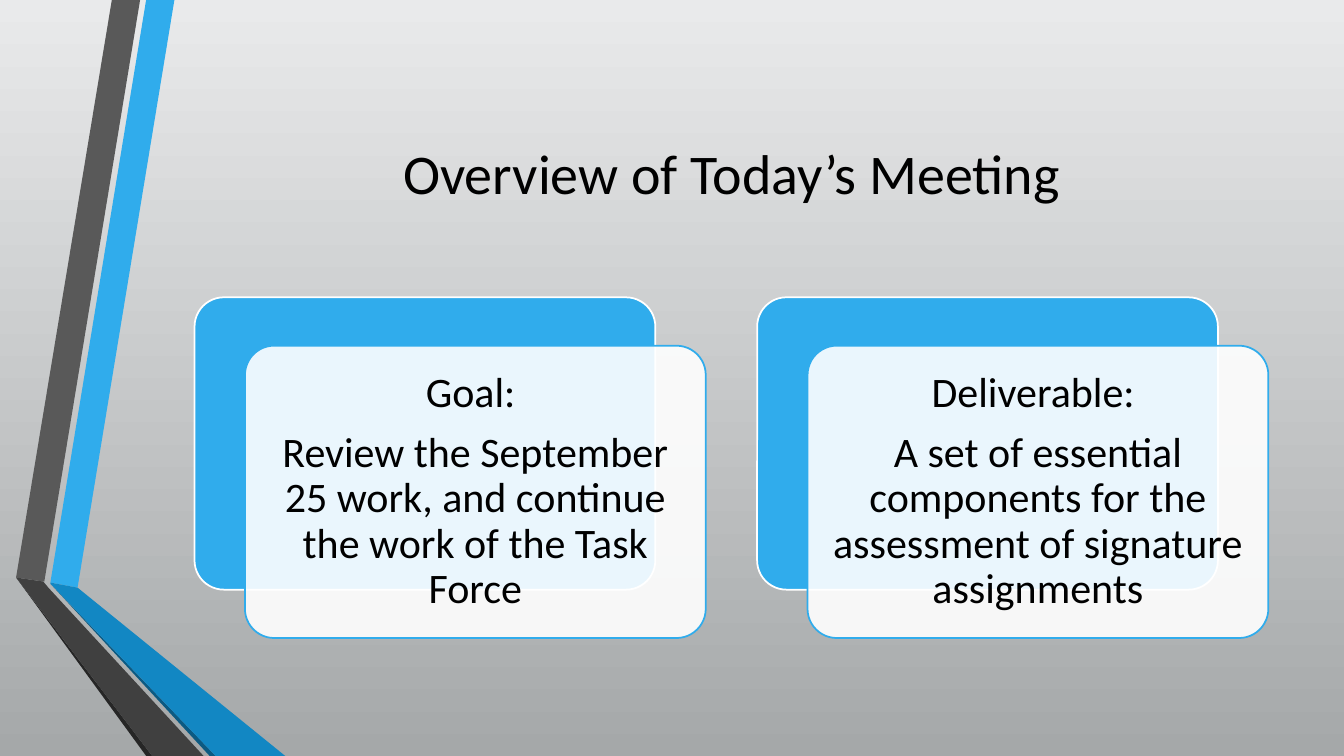
from dataclasses import dataclass

from lxml import etree
from pptx import Presentation
from pptx import util as u
from pptx.dml.color import RGBColor
from pptx.enum import shapes, text
from pptx.oxml.ns import qn

Inches, Pt = u.Inches, u.Pt


@dataclass(frozen=True)
class Theme:
    font: str = "Calibri"
    title_size: int = 40
    body_size: int = 30
    ink: str = "000000"
    accent: str = "30ACEC"
    accent_fold: str = "1287C3"
    accent_edge: str = "0C5A82"
    gray: str = "595959"
    gray_fold: str = "404040"
    gray_edge: str = "262626"
    panel: str = "FFFFFF"
    panel_opacity: int = 90
    backdrop_top: str = "E9EAEB"
    backdrop_bottom: str = "A5A8A9"


THEME = Theme()

# Folded ribbons on the left edge, back to front
RIBBONS = [
    (THEME.accent, [(0.5, 5.78), (0.77, 5.83), (1.73, 0), (1.45, 0)]),
    (THEME.gray, [(1.39, 0), (1.11, 0), (0.16, 5.73), (0.44, 5.77)]),
    (THEME.gray_edge, [(0.16, 5.73), (1.45, 7.5), (1.51, 7.5)]),
    (THEME.accent_edge, [(0.5, 5.79), (2.08, 7.5), (2.14, 7.5)]),
    (THEME.accent_fold,
     [(0.5, 5.79), (2.14, 7.5), (2.83, 7.5), (0.77, 5.83), (0.5, 5.78)]),
    (THEME.gray_fold,
     [(2.02, 7.5), (0.48, 5.83), (0.43, 5.77), (0.16, 5.73), (1.51, 7.5)]),
]

# Cards: a coloured back plate with a translucent panel in front
CARDS = [
    ("Goal: ",
     "Review the September 25 work, and continue the work of the Task Force"),
    ("Deliverable: ",
     "A set of essential components for the assessment of signature assignments"),
]
CARD_LEFT, CARD_TOP, CARD_STEP = 1.93, 2.95, 5.58
CARD_WIDTH, CARD_HEIGHT = 4.57, 2.9
PANEL_DX, PANEL_DY, TEXT_INSET = 0.5, 0.48, 0.09


def rgb(value):
    return RGBColor.from_string(value)


def paint_backdrop(slide):
    fill = slide.background.fill
    fill.gradient()
    fill.gradient_angle = 270
    colors = (THEME.backdrop_top, THEME.backdrop_bottom)
    for stop, position, color in zip(fill.gradient_stops, (0, 1), colors):
        stop.position = position
        stop.color.rgb = rgb(color)


def add_ribbon(slide, color, points):
    corners = [(Inches(x), Inches(y)) for x, y in points]
    builder = slide.shapes.build_freeform(*corners[0])
    builder.add_line_segments(corners[1:], close=True)
    ribbon = builder.convert_to_shape()
    ribbon.shadow.inherit = False
    ribbon.fill.solid()
    ribbon.fill.fore_color.rgb = rgb(color)
    ribbon.line.fill.background()


def add_plate(slide, left, top, color, outline, opacity=100):
    plate = slide.shapes.add_shape(
        shapes.MSO_SHAPE.ROUNDED_RECTANGLE, Inches(left), Inches(top),
        Inches(CARD_WIDTH), Inches(CARD_HEIGHT))
    plate.adjustments[0] = 0.1
    plate.shadow.inherit = False
    plate.fill.solid()
    plate.fill.fore_color.rgb = rgb(color)
    plate.line.color.rgb = rgb(outline)
    plate.line.width = Pt(1.25)
    if opacity < 100:
        fill_color = plate.fill._xPr.find(qn("a:solidFill"))[0]
        etree.SubElement(fill_color, qn("a:alpha"), val=str(opacity * 1000))


def add_centred_text(slide, box, lines, size, margin, spacing=1, after=0):
    frame = slide.shapes.add_textbox(*map(Inches, box)).text_frame
    frame.word_wrap = True
    frame.vertical_anchor = text.MSO_ANCHOR.MIDDLE
    frame.margin_left = frame.margin_right = Inches(margin)
    frame.margin_top = frame.margin_bottom = Inches(margin)
    frame.text = "\n".join(lines)
    for paragraph in frame.paragraphs:
        paragraph.alignment = text.PP_ALIGN.CENTER
        paragraph.line_spacing = spacing
        paragraph.space_after = Pt(after)
        for run in paragraph.runs:
            run.font.name = THEME.font
            run.font.size = Pt(size)
            run.font.color.rgb = rgb(THEME.ink)


def add_card(slide, left, lines):
    panel_left, panel_top = left + PANEL_DX, CARD_TOP + PANEL_DY
    add_plate(slide, left, CARD_TOP, THEME.accent, THEME.panel)
    add_plate(slide, panel_left, panel_top, THEME.panel, THEME.accent,
              THEME.panel_opacity)
    box = (panel_left + TEXT_INSET, panel_top + TEXT_INSET,
           CARD_WIDTH - 2 * TEXT_INSET, CARD_HEIGHT - 2 * TEXT_INSET)
    add_centred_text(slide, box, lines, THEME.body_size, margin=0.12,
                     spacing=0.9, after=0.35 * THEME.body_size)


def main():
    deck = Presentation()
    deck.slide_width, deck.slide_height = Inches(13.33), Inches(7.5)
    slide = deck.slides.add_slide(deck.slide_layouts[6])

    # Backdrop and ribbons
    paint_backdrop(slide)
    for color, points in RIBBONS:
        add_ribbon(slide, color, points)

    # Title
    add_centred_text(slide, (1.93, 0.75, 10.65, 1.92),
                     ["Overview of Today’s Meeting"], THEME.title_size, margin=0.1)

    # Goal and deliverable
    for index, lines in enumerate(CARDS):
        add_card(slide, CARD_LEFT + index * CARD_STEP, lines)

    deck.save("out.pptx")


if __name__ == "__main__":
    main()
